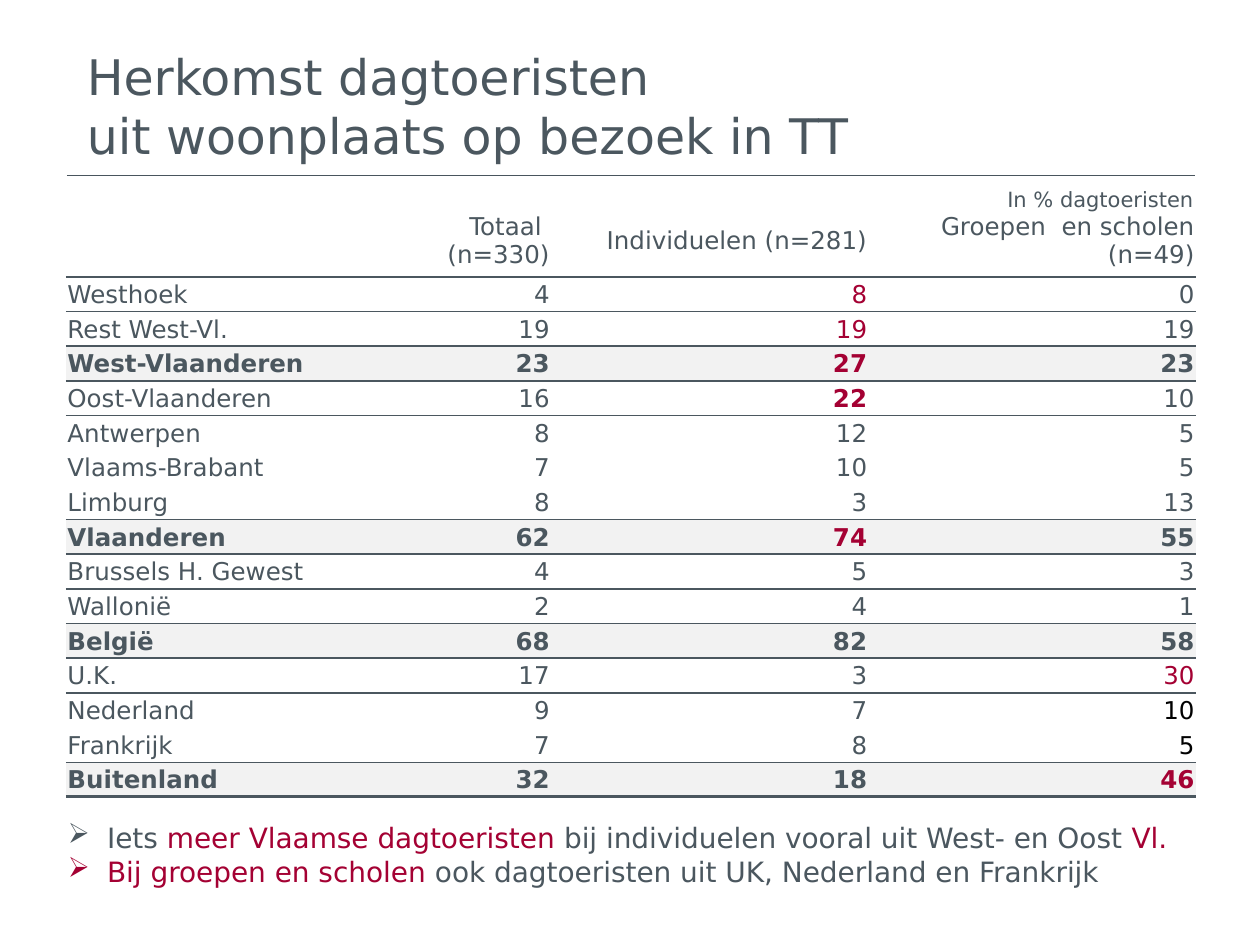
from lxml import etree
from pptx import Presentation
from pptx import util as u
from pptx.dml.color import RGBColor
from pptx.enum import shapes, text
from pptx.oxml import ns

GREY = RGBColor(0x4B, 0x57, 0x5F)
RULE = RGBColor(0x49, 0x55, 0x5D)
RED = RGBColor(0xA4, 0x01, 0x33)
BLACK = RGBColor(0, 0, 0)
WHITE = RGBColor(0xFF, 0xFF, 0xFF)
PALE = RGBColor(0xF2, 0xF2, 0xF2)
FACE = "DejaVu Sans"
PLAIN = "{2D5ABB26-0587-4C30-8999-92F81FD0307C}"  # table style without grid

# Content
TITLE = "Herkomst dagtoeristen \vuit woonplaats op bezoek in TT"
UNIT = "In % dagtoeristen"
HEAD = ("", "Totaal \n(n=330)", "Individuelen (n=281)",
        "Groepen  en scholen (n=49)")
ROWS = [
    ("Westhoek", 4, 8, 0),
    ("Rest West-Vl.", 19, 19, 19),
    ("West-Vlaanderen", 23, 27, 23),
    ("Oost-Vlaanderen", 16, 22, 10),
    ("Antwerpen", 8, 12, 5),
    ("Vlaams-Brabant", 7, 10, 5),
    ("Limburg", 8, 3, 13),
    ("Vlaanderen", 62, 74, 55),
    ("Brussels H. Gewest", 4, 5, 3),
    ("Wallonië", 2, 4, 1),
    ("België", 68, 82, 58),
    ("U.K.", 17, 3, 30),
    ("Nederland", 9, 7, 10),
    ("Frankrijk", 7, 8, 5),
    ("Buitenland", 32, 18, 46),
]
SUMS = {"West-Vlaanderen", "Vlaanderen", "België", "Buitenland"}
OPEN = {"Antwerpen", "Vlaams-Brabant", "Nederland"}  # no line below
TINT = {
    ("Westhoek", 2): RED, ("Rest West-Vl.", 2): RED,
    ("West-Vlaanderen", 2): RED, ("Oost-Vlaanderen", 2): RED,
    ("Vlaanderen", 2): RED, ("U.K.", 3): RED, ("Buitenland", 3): RED,
    ("Nederland", 3): BLACK, ("Frankrijk", 3): BLACK,
}
BOLD = {("Oost-Vlaanderen", 2)}
NOTES = [
    [("Iets ", GREY), ("meer Vlaamse dagtoeristen ", RED),
     ("bij individuelen vooral uit West- en Oost ", GREY), ("Vl.", RED)],
    [("Bij groepen en scholen ", RED),
     ("ook dagtoeristen uit UK, Nederland en Frankrijk", GREY)],
]
WIDTHS = (6.17, 3.61, 6.4, 6.6)
TOP_H, ROW_H = 1.47, 0.7


def style(para, size, color=None, bold=False):
    font = para.font
    font.name, font.size, font.bold = FACE, u.Pt(size), bold
    if color is not None:
        font.color.rgb = color


def add_box(slide, x, y, w, h, anchor):
    box = slide.shapes.add_textbox(u.Cm(x), u.Cm(y), u.Cm(w), u.Cm(h))
    frame = box.text_frame
    frame.word_wrap = True
    frame.vertical_anchor = anchor
    return frame


def add_edge(cell, side, width):
    line = etree.Element(ns.qn("a:ln" + side), w=str(u.Pt(width)))
    if width:
        fill = etree.SubElement(line, ns.qn("a:solidFill"))
        etree.SubElement(fill, ns.qn("a:srgbClr"), val=str(GREY))
    else:
        etree.SubElement(line, ns.qn("a:noFill"))
    cell._tc.get_or_add_tcPr().insert(0, line)


def fill_cell(cell, words, col, color, bold, shade, above, below):
    cell.margin_left = cell.margin_right = cell.margin_top = u.Cm(0.03)
    cell.margin_bottom = 0
    cell.vertical_anchor = text.MSO_ANCHOR.MIDDLE
    cell.fill.solid()
    cell.fill.fore_color.rgb = shade
    cell.text = words
    for para in cell.text_frame.paragraphs:
        para.alignment = text.PP_ALIGN.RIGHT if col else text.PP_ALIGN.LEFT
        style(para, 14, color, bold)
    add_edge(cell, "B", below)
    add_edge(cell, "T", above)


def add_grid(slide):
    count = len(ROWS) + 1
    frame = slide.shapes.add_table(
        count, len(WIDTHS), u.Cm(1.33), u.Cm(4.11),
        u.Cm(sum(WIDTHS)), u.Cm(TOP_H + ROW_H * len(ROWS)))
    grid = frame.table
    grid.first_row = grid.horz_banding = False
    grid._tbl.tblPr.find(ns.qn("a:tableStyleId")).text = PLAIN
    for col, width in zip(grid.columns, WIDTHS):
        col.width = u.Cm(width)
    above = 0
    for r, row in enumerate([HEAD] + ROWS):
        name = row[0]
        grid.rows[r].height = u.Cm(ROW_H if r else TOP_H)
        below = 0 if name in OPEN else 2 if r == count - 1 else 1
        total = name in SUMS
        for c, value in enumerate(row):
            key = (name, c)
            fill_cell(grid.cell(r, c), str(value), c, TINT.get(key, GREY),
                      total or key in BOLD, PALE if total else WHITE,
                      above, below)
        above = below


def add_notes(slide):
    frame = add_box(slide, 1.12, 16.71, 23.19, 1.02, text.MSO_ANCHOR.MIDDLE)
    for i, parts in enumerate(NOTES):
        para = frame.add_paragraph() if i else frame.paragraphs[0]
        props = para._p.get_or_add_pPr()
        props.set("marL", str(u.Cm(0.79)))
        props.set("indent", str(-u.Cm(0.79)))
        etree.SubElement(props, ns.qn("a:buChar"), char="➢")
        style(para, 16)
        for words, color in parts:
            run = para.add_run()
            run.text = words
            run.font.color.rgb = color


def main():
    deck = Presentation()
    deck.slide_width, deck.slide_height = u.Cm(25.4), u.Cm(19.05)
    slide = deck.slides.add_slide(deck.slide_layouts[6])

    # Title and the rule below it
    rule = slide.shapes.add_connector(
        shapes.MSO_CONNECTOR.STRAIGHT,
        u.Cm(1.35), u.Cm(3.53), u.Cm(24.08), u.Cm(3.53))
    rule.line.color.rgb = RULE
    rule.line.width = u.Pt(0.25)
    etree.SubElement(rule._element.spPr, ns.qn("a:effectLst"))
    head = add_box(slide, 1.5, 0.53, 22.6, 3.18, text.MSO_ANCHOR.MIDDLE)
    head.text = TITLE
    style(head.paragraphs[0], 28, GREY)

    # Table, remarks and unit
    add_grid(slide)
    add_notes(slide)
    unit = add_box(slide, 17.3, 3.63, 7.01, 0.76, text.MSO_ANCHOR.TOP)
    unit.text = UNIT
    unit.paragraphs[0].alignment = text.PP_ALIGN.RIGHT
    style(unit.paragraphs[0], 12, GREY)

    deck.save("out.pptx")


if __name__ == "__main__":
    main()
